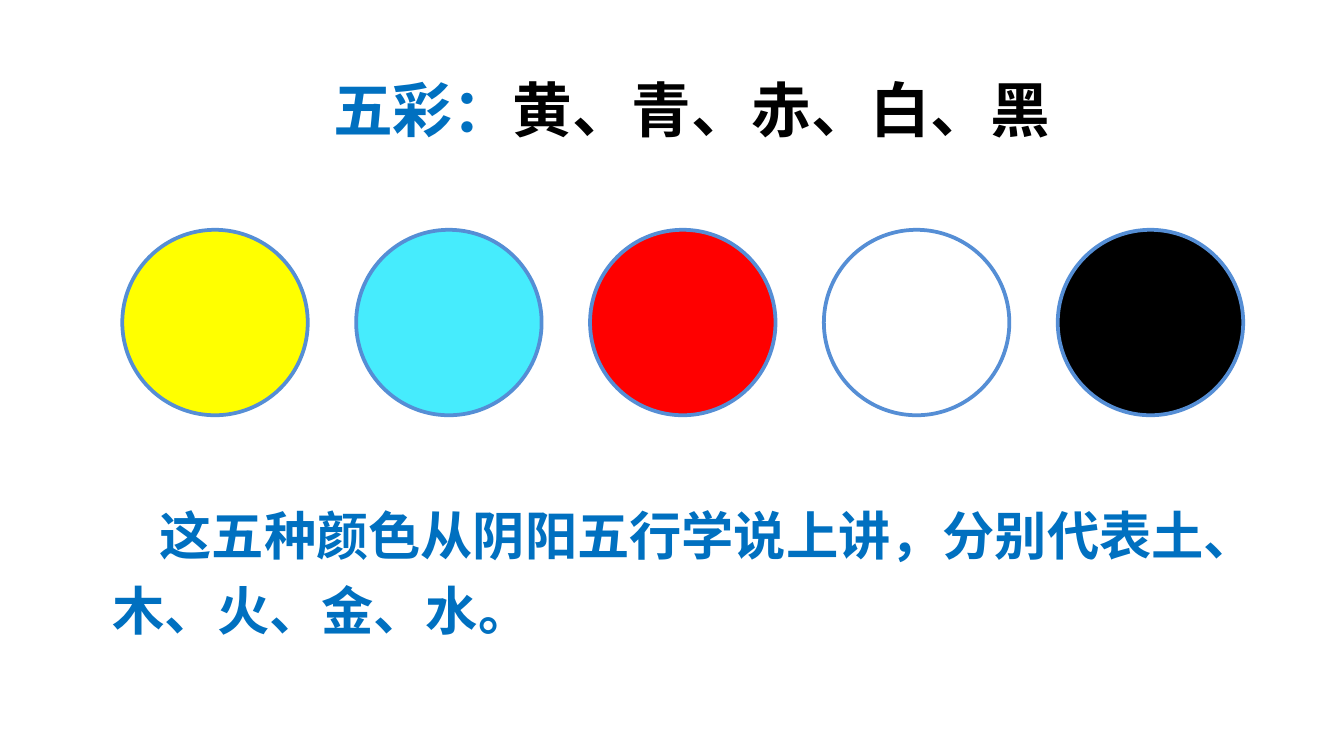
from pptx import Presentation
from pptx import util as u
from pptx.dml import color
from pptx.enum import shapes, text
from pptx.oxml import ns
from lxml import etree


def rgb(value):
    return color.RGBColor.from_string(value)


class SlideBuilder:
    """Holds the style and the current slide, and adds elements to it."""

    font_name = "Noto Sans CJK SC"
    accent = "0070C0"
    outline = "558ED5"

    def __init__(self, slide):
        self.slide = slide

    def text_box(self, left, top, width, height, runs, size, wrap=True, spacing=1.0, indent=0):
        box = self.slide.shapes.add_textbox(*map(u.Inches, (left, top, width, height)))
        frame = box.text_frame
        frame.word_wrap = wrap
        frame.auto_size = text.MSO_AUTO_SIZE.SHAPE_TO_FIT_TEXT
        paragraph = frame.paragraphs[0]
        paragraph.line_spacing = spacing
        paragraph._p.get_or_add_pPr().set("indent", str(u.Inches(indent)))
        for wording, hue in runs:
            run = paragraph.add_run()
            run.text = wording
            style = {"name": self.font_name, "size": u.Pt(size), "bold": True}
            for key, value in style.items():
                setattr(run.font, key, value)
            run.font.color.rgb = rgb(hue)
            east_asian = etree.SubElement(run._r.get_or_add_rPr(), ns.qn("a:ea"))
            east_asian.set("typeface", self.font_name)

    def circle(self, left, top, diameter, fill):
        disc = self.slide.shapes.add_shape(
            shapes.MSO_SHAPE.OVAL, *map(u.Inches, (left, top, diameter, diameter)))
        disc.shadow.inherit = False
        disc.fill.solid()
        disc.fill.fore_color.rgb = rgb(fill)
        disc.line.color.rgb = rgb(self.outline)
        disc.line.width = u.Pt(2)


def main():
    presentation = Presentation()
    presentation.slide_width = u.Inches(10)
    presentation.slide_height = u.Inches(10 * 9 / 16)
    builder = SlideBuilder(presentation.slides.add_slide(presentation.slide_layouts[6]))

    heading = [("五彩：", builder.accent), ("黄、青、赤、白、黑", "000000")]
    builder.text_box(2.38, 0.49, 5.83, 0.64, heading, 32, wrap=False)

    five_colours = ["FFFF00", "46ECFD", "FF0000", "FFFFFF", "000000"]
    for index, hue in enumerate(five_colours):
        builder.circle(0.91 + index * 1.74, 1.71, 1.38, hue)

    meaning = "这五种颜色从阴阳五行学说上讲，分别代表土、木、火、金、水。"
    builder.text_box(0.74, 3.6, 8.51, 1.23, [(meaning, builder.accent)], 28,
                     spacing=1.2, indent=0.35)

    presentation.save("out.pptx")


if __name__ == "__main__":
    main()
